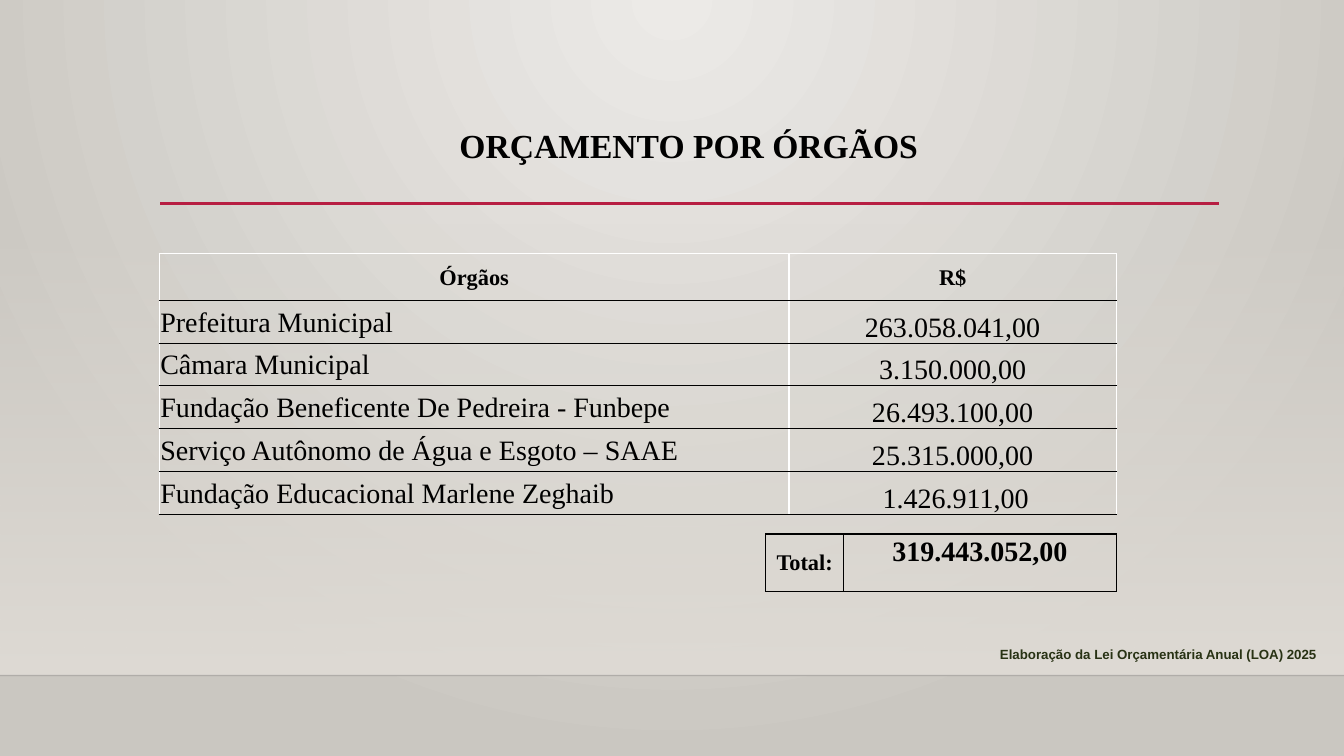
"""Build the slide with the 2025 budget by public body."""
from lxml import etree
from pptx import Presentation
from pptx.dml.color import RGBColor
from pptx.enum.shapes import MSO_CONNECTOR, MSO_SHAPE
from pptx.enum.text import MSO_ANCHOR, PP_ALIGN
from pptx.oxml import parse_xml
from pptx.oxml.ns import nsdecls, qn
from pptx.util import Pt

LINE, RECT = MSO_CONNECTOR.STRAIGHT, MSO_SHAPE.RECTANGLE
LEFT, MID, RIGHT = PP_ALIGN.LEFT, PP_ALIGN.CENTER, PP_ALIGN.RIGHT
TOP, HALF, LOW = MSO_ANCHOR.TOP, MSO_ANCHOR.MIDDLE, MSO_ANCHOR.BOTTOM
SERIF = "Times New Roman"
BLACK, WHITE = "000000", "FFFFFF"


def write(frame, text, size, align, bold=True, face=SERIF, tint=BLACK):
    para = frame.paragraphs[0]
    para.text, para.alignment = text, align
    font = para.font
    font.size, font.bold, font.name = Pt(size), bold, face
    font.color.rgb = RGBColor.from_string(tint)
    return para


def shade(props, start, end, alpha, way):
    old = props.find(qn("a:solidFill"))
    props.replace(old, parse_xml(
        f'<a:gradFill {nsdecls("a")} rotWithShape="1"><a:gsLst>'
        f'<a:gs pos="0"><a:srgbClr val="{start}"><a:alpha val="{alpha}"/></a:srgbClr></a:gs>'
        f'<a:gs pos="100000"><a:srgbClr val="{end}"/></a:gs></a:gsLst>{way}</a:gradFill>'))


deck = Presentation()
deck.slide_width, deck.slide_height = Pt(960), Pt(540)
slide = deck.slides.add_slide(deck.slide_layouts[6])
shapes = slide.shapes

slide.background.fill.solid()
shade(slide.element.find(".//" + qn("p:bgPr")), "ECEAE7", "CAC7C1", 100000,
      '<a:path path="circle"><a:fillToRect l="43000" r="43000" b="100000"/></a:path>')

band = shapes.add_shape(RECT, Pt(0), Pt(159), Pt(960), Pt(323.5))
band.shadow.inherit = False
band.line.fill.background()
band.fill.solid()
shade(band.element.spPr, "DFDBD5", "DFDBD5", 0, '<a:lin ang="5400000" scaled="0"/>')

for x, end, y, tint, width, alpha in [
    (0, 960, 482.5, "000001", 1, 20000),
    (114.5, 871, 145.2, "B71E42", 2.5, 100000),
]:
    rule = shapes.add_connector(LINE, Pt(x), Pt(y), Pt(end), Pt(y))
    rule.line.width = Pt(width)
    rule.line.color.rgb = RGBColor.from_string(tint)
    props = rule.element.spPr
    color = props.find(".//" + qn("a:srgbClr"))
    etree.SubElement(color, qn("a:alpha")).set("val", str(alpha))
    etree.SubElement(props, qn("a:effectLst"))

title = shapes.add_textbox(Pt(114), Pt(63.5), Pt(756), Pt(83.5)).text_frame
title.word_wrap, title.vertical_anchor = True, HALF
write(title, "ORÇAMENTO POR ÓRGÃOS", 24, MID).line_spacing = 0.9

note = shapes.add_textbox(Pt(624.5), Pt(458), Pt(323), Pt(18.7)).text_frame
note.word_wrap = True
write(note, "Elaboração da Lei Orçamentária Anual (LOA) 2025", 9.5, RIGHT,
      face="Arial", tint="283214")

bodies = [
    ("Órgãos", "R$"),
    ("Prefeitura Municipal", "263.058.041,00"),
    ("Câmara Municipal", "3.150.000,00"),
    ("Fundação Beneficente De Pedreira - Funbepe", "26.493.100,00"),
    ("Serviço Autônomo de Água e Esgoto – SAAE", "25.315.000,00"),
    ("Fundação Educacional Marlene Zeghaib", "1.426.911,00"),
]
total = [("Total:", "319.443.052,00")]

for rows, x, y, widths, heights, side in [
    (bodies, 113.8, 181.2, (449.8, 233.8), (33.6, 30.7, 30, 30.7, 30.7, 30.7), WHITE),
    (total, 547, 381.5, (55.5, 195), (41.2,), BLACK),
]:
    grid = shapes.add_table(len(rows), 2, Pt(x), Pt(y), Pt(sum(widths)),
                            Pt(sum(heights))).table
    grid.first_row = grid.horz_banding = False
    for col, width in zip(grid.columns, widths):
        col.width = Pt(width)
    for r, row in enumerate(rows):
        grid.rows[r].height = Pt(heights[r])
        for c, text in enumerate(row):
            cell = grid.cell(r, c)
            cell.margin_left = cell.margin_right = cell.margin_top = Pt(0.7)
            cell.margin_bottom = Pt(0)
            head = rows is bodies and r == 0
            if rows is total:
                style = (20, MID, True, TOP) if c else (16, MID, True, HALF)
            elif head:
                style = (16, MID, True, HALF)
            else:
                style = (20, MID, False, LOW) if c else (20, LEFT, False, HALF)
            size, align, bold, anchor = style
            write(cell.text_frame, text, size, align, bold)
            cell.vertical_anchor = anchor
            props = cell._tc.get_or_add_tcPr()
            for edge, tint in zip("LRTB", (side, side, side if head else BLACK, BLACK)):
                props.append(parse_xml(
                    f'<a:ln{edge} {nsdecls("a")} w="12700"><a:solidFill>'
                    f'<a:srgbClr val="{tint}"/></a:solidFill></a:ln{edge}>'))
            cell.fill.background()
    if rows is bodies:
        grid.cell(5, 1).margin_left = Pt(5)
    else:
        grid.cell(0, 1).margin_top = Pt(2)

deck.save("out.pptx")
